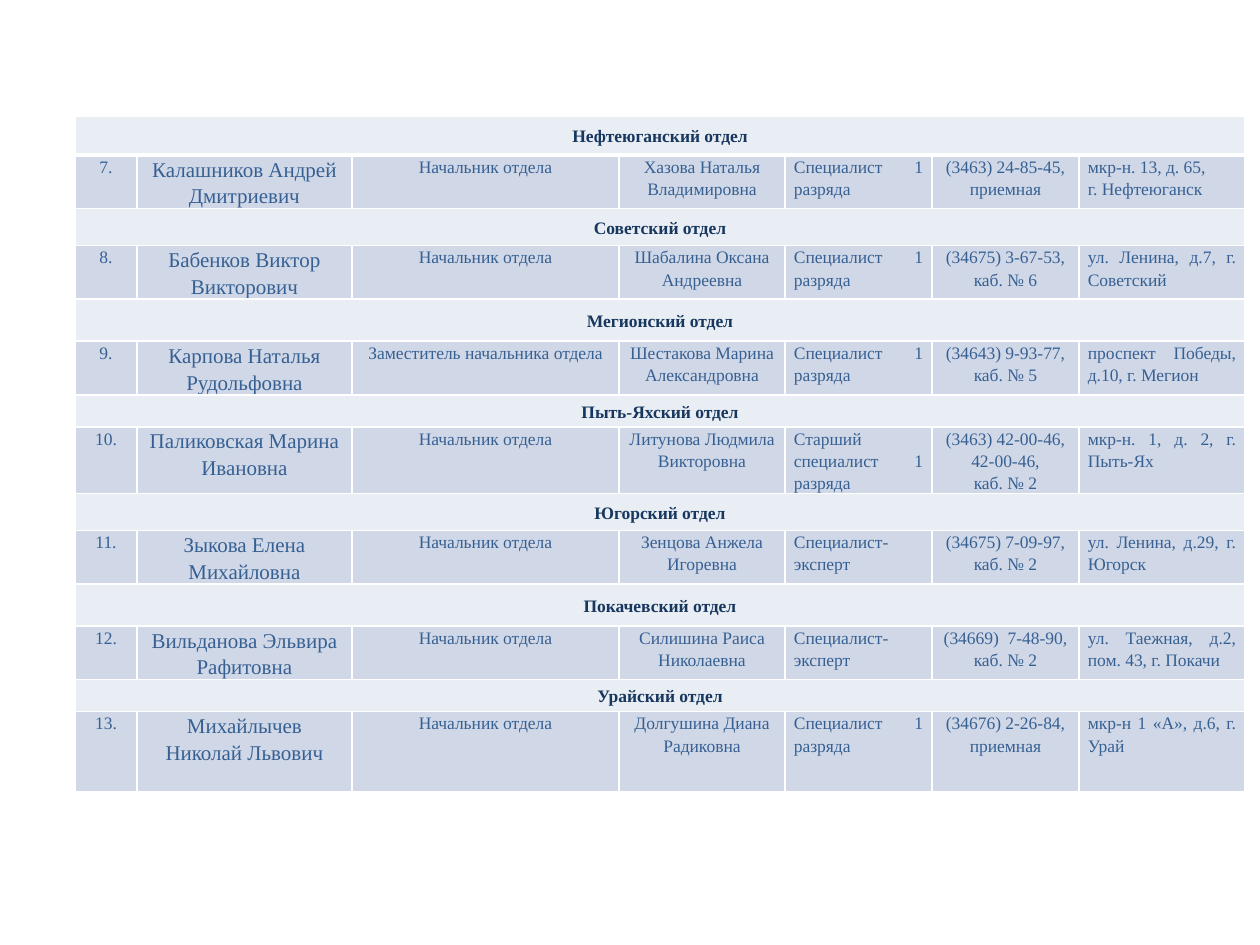
"""Build a slide with the staff directory of seven territorial departments."""
import pptx
import pptx.dml.color
import pptx.enum.text
import pptx.oxml
import pptx.oxml.ns
import pptx.util

PX = 914400 / 126
FONT = "Times New Roman"
WHITE = pptx.dml.color.RGBColor(0xFF, 0xFF, 0xFF)
HEADING_FILL = pptx.dml.color.RGBColor(0xE9, 0xED, 0xF4)
PERSON_FILL = pptx.dml.color.RGBColor(0xD0, 0xD8, 0xE8)
HEADING_TEXT = pptx.dml.color.RGBColor(0x17, 0x37, 0x5E)
PERSON_TEXT = pptx.dml.color.RGBColor(0x37, 0x60, 0x92)
CENTER = pptx.enum.text.PP_ALIGN.CENTER
JUSTIFY = pptx.enum.text.PP_ALIGN.JUSTIFY

COLUMN_WIDTHS = [62, 215, 267, 166, 147, 147, 166]
COLUMN_ALIGNS = [CENTER, CENTER, CENTER, CENTER, JUSTIFY, CENTER, JUSTIFY]
COLUMN_SIZES = [10, 12, 10, 10, 10, 10, 10]
HEADING_HEIGHTS = [39, 37, 42, 32, 37, 42, 32]
PERSON_HEIGHTS = [40, 40, 40, 40, 40, 40, 80]
FIRST_NUMBER = 7

HEAD = "Начальник отдела"
SPECIALIST = "Специалист 1 разряда"
EXPERT = "Специалист-эксперт"
DEPARTMENTS = [
    ("Нефтеюганский отдел", "Калашников Андрей Дмитриевич", HEAD,
     "Хазова Наталья Владимировна", SPECIALIST,
     "(3463) 24-85-45,\nприемная", "мкр-н. 13, д. 65, \nг. Нефтеюганск"),
    ("Советский отдел", "Бабенков Виктор Викторович", HEAD,
     "Шабалина Оксана Андреевна", SPECIALIST,
     "(34675) 3-67-53, каб. № 6", "ул. Ленина, д.7, г. Советский"),
    ("Мегионский отдел", "Карпова Наталья Рудольфовна", "Заместитель начальника отдела",
     "Шестакова Марина Александровна", SPECIALIST,
     "(34643) 9-93-77, каб. № 5", "проспект Победы, д.10, г. Мегион"),
    ("Пыть-Яхский отдел", "Паликовская Марина Ивановна", HEAD,
     "Литунова Людмила Викторовна", "Старший специалист 1 разряда",
     "(3463) 42-00-46, 42-00-46,\nкаб. № 2", "мкр-н. 1, д. 2, г. Пыть-Ях"),
    ("Югорский отдел", "Зыкова Елена Михайловна", HEAD,
     "Зенцова Анжела Игоревна", EXPERT,
     "(34675) 7-09-97, каб. № 2", "ул. Ленина, д.29, г. Югорск"),
    ("Покачевский отдел", "Вильданова Эльвира Рафитовна", HEAD,
     "Силишина Раиса Николаевна", EXPERT,
     "(34669)  7-48-90, каб. № 2", "ул. Таежная, д.2, пом. 43, г. Покачи"),
    ("Урайский отдел", "Михайлычев Николай Львович", HEAD,
     "Долгушина Диана Радиковна", SPECIALIST,
     "(34676) 2-26-84, приемная", "мкр-н 1 «А», д.6, г. Урай"),
]


def px(length):
    return pptx.util.Emu(round(length * PX))


def style_cell(cell, fill, bottom=1):
    properties = cell._tc.get_or_add_tcPr()
    for side, points in (("L", 1), ("R", 1), ("T", 1), ("B", bottom)):
        properties.append(pptx.oxml.parse_xml(
            f'<a:ln{side} {pptx.oxml.ns.nsdecls("a")} w="{pptx.util.Pt(points)}">'
            f'<a:solidFill><a:srgbClr val="{WHITE}"/></a:solidFill></a:ln{side}>'))
    cell.fill.solid()
    cell.fill.fore_color.rgb = fill
    cell.margin_left = cell.margin_right = px(9)
    cell.margin_top = cell.margin_bottom = 0


def write_cell(cell, text, size, color, align, bold=False):
    for index, line in enumerate(text.split("\n")):
        frame = cell.text_frame
        paragraph = frame.add_paragraph() if index else frame.paragraphs[0]
        paragraph.alignment = align
        paragraph.line_spacing = 1.15
        run = paragraph.add_run()
        run.text = line
        run.font.name = FONT
        run.font.size = pptx.util.Pt(size)
        run.font.bold = bold
        run.font.color.rgb = color


def fill_heading(table, row, department):
    for cell in table.rows[row].cells:
        style_cell(cell, HEADING_FILL, bottom=1 if row else 3)
    heading = table.cell(row, 0)
    heading.merge(table.cell(row, len(COLUMN_WIDTHS) - 1))
    heading.vertical_anchor = pptx.enum.text.MSO_ANCHOR.MIDDLE
    write_cell(heading, department, 10, HEADING_TEXT, CENTER, bold=True)


def fill_person(table, row, values):
    cells = table.rows[row].cells
    for cell, value, size, align in zip(cells, values, COLUMN_SIZES, COLUMN_ALIGNS):
        style_cell(cell, PERSON_FILL)
        write_cell(cell, value, size, PERSON_TEXT, align)


def add_directory(slide):
    frame = slide.shapes.add_table(
        2 * len(DEPARTMENTS), len(COLUMN_WIDTHS),
        px(75), px(116), px(sum(COLUMN_WIDTHS)), px(695))
    table = frame.table
    table.first_row = table.horz_banding = False
    for column, width in zip(table.columns, COLUMN_WIDTHS):
        column.width = px(width)
    for index, (department, *person) in enumerate(DEPARTMENTS):
        row = 2 * index
        table.rows[row].height = px(HEADING_HEIGHTS[index])
        table.rows[row + 1].height = px(PERSON_HEIGHTS[index])
        fill_heading(table, row, department)
        fill_person(table, row + 1, [f"{FIRST_NUMBER + index}.", *person])
    frame.height = px(695)


def main():
    presentation = pptx.Presentation()
    presentation.slide_width = px(1260)
    presentation.slide_height = px(945)
    slide = presentation.slides.add_slide(presentation.slide_layouts[6])
    add_directory(slide)
    presentation.save("out.pptx")


if __name__ == "__main__":
    main()
